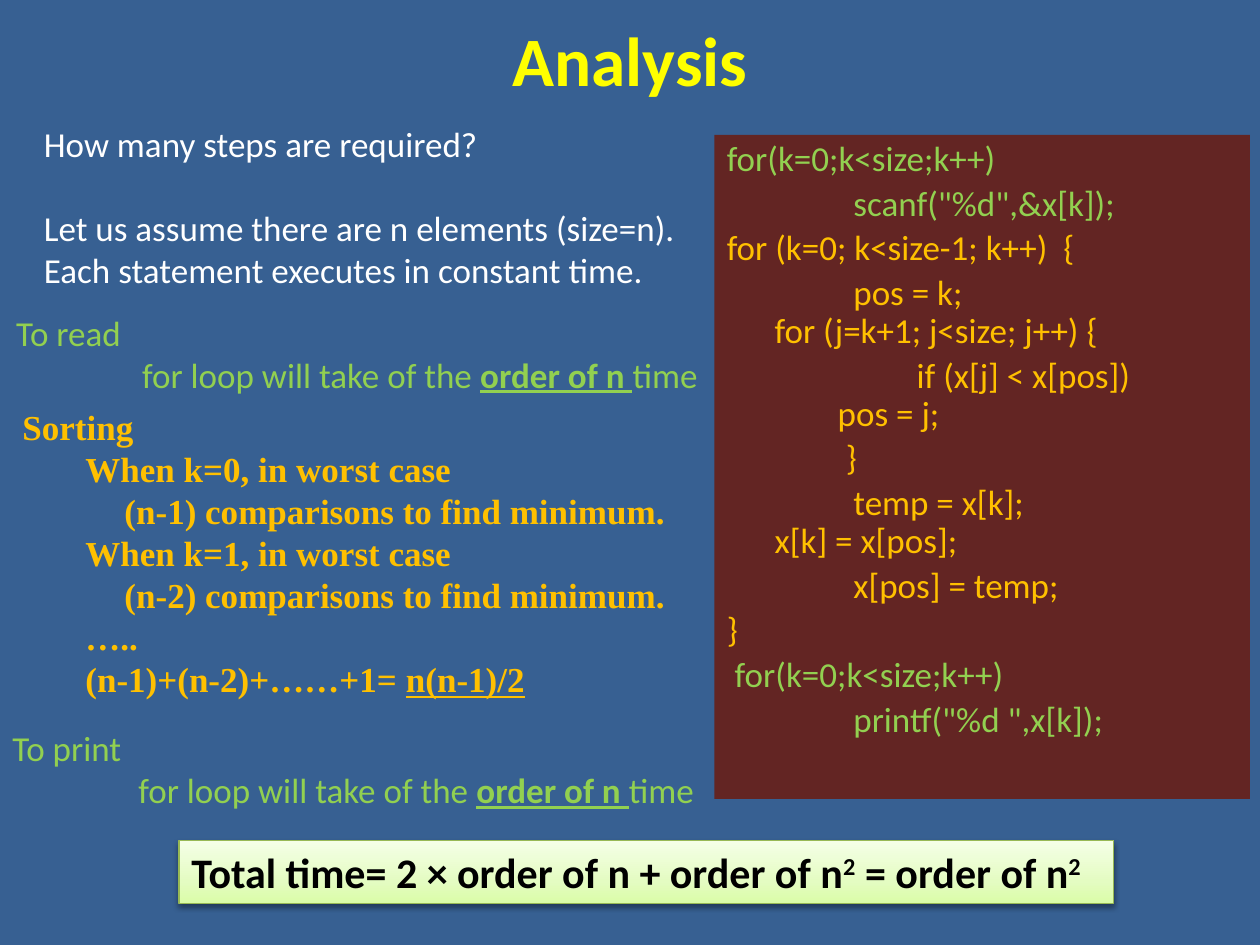
import pptx
import pptx.util
from pptx.dml.color import RGBColor
from pptx.enum.shapes import MSO_SHAPE
from pptx.enum.text import MSO_ANCHOR, PP_ALIGN
from pptx.oxml import parse_xml
from pptx.oxml.ns import nsdecls, qn
from pptx.util import Inches, Pt

BLUE = RGBColor(0x37, 0x60, 0x92)
MAROON = RGBColor(0x63, 0x25, 0x23)
YELLOW = RGBColor(0xFF, 0xFF, 0x00)
WHITE = RGBColor(0xFF, 0xFF, 0xFF)
BLACK = RGBColor(0, 0, 0)
GREEN = RGBColor(0x92, 0xD0, 0x50)
AMBER = RGBColor(0xFF, 0xC0, 0x00)
OLIVE = RGBColor(0x98, 0xB9, 0x55)
GLOW = [(0, "DAFDA7"), (35, "E4FCC2"), (100, "F5FFE7")]

# Lines of runs: (text, marks) with b = bold, u = underline, ^ = superscript
INTRO = [
    "How many steps are required?",
    "Let us assume there are n elements (size=n).",
    "Each statement executes in constant time.",
]
LOOP = [("for loop will take of the ", ""), ("order of n ", "bu"), ("time", "")]
LOOPS = [("To read", 0.03, 2.42), ("To print", 0, 5.72)]
# (left margin, first-line indent, runs)
SORT = [
    (0.38, -0.38, "Sorting"),
    (0.81, -0.31, "When k=0, in worst case"),
    (0.81, 0, "(n-1) comparisons to find minimum."),
    (0.81, -0.31, "When k=1, in worst case"),
    (0.81, 0, "(n-2) comparisons to find minimum."),
    (0.81, -0.31, "….."),
    (0.81, -0.31, [("(n-1)+(n-2)+……+1= ", ""), ("n(n-1)/2", "u")]),
]
CODE = [
    (GREEN, "for(k=0;k<size;k++)"),
    (GREEN, '                scanf("%d",&x[k]);'),
    (AMBER, "for (k=0; k<size-1; k++)  {"),
    (AMBER, "                pos = k;\vfor (j=k+1; j<size; j++) {"),
    (AMBER, "                        if (x[j] < x[pos])\v\tpos = j;"),
    (AMBER, "\t         }"),
    (AMBER, "                temp = x[k];\vx[k] = x[pos];"),
    (AMBER, "                x[pos] = temp;"),
    (AMBER, "}"),
    (GREEN, " for(k=0;k<size;k++)"),
    (GREEN, '                printf("%d ",x[k]);'),
]
TOTAL = [("Total time= 2 × order of n + order of n", ""), ("2", "^"),
         (" = order of n", ""), ("2", "^")]


def style(para, color, size=20, name="Calibri", bold=False):
    font = para.font
    font.name, font.size, font.bold = name, Pt(size), bold
    font.color.rgb = color


def write(frame, lines, color, **look):
    """Fill the frame with one paragraph per line and return the paragraphs."""
    paras = []
    for i, line in enumerate(lines):
        para = frame.add_paragraph() if i else frame.paragraphs[0]
        para.alignment = PP_ALIGN.LEFT
        if isinstance(line, str):
            para.text = line
        else:
            for text, marks in line:
                run = para.add_run()
                run.text = text
                if "b" in marks:
                    run.font.bold = True
                if "u" in marks:
                    run.font.underline = True
                if "^" in marks:
                    run.font._element.set("baseline", "30000")
        style(para, color, **look)
        paras.append(para)
    return paras


def indent(para, left, first=0):
    props = para._p.get_or_add_pPr()
    props.set("marL", str(Inches(left)))
    props.set("indent", str(Inches(first)))


def add_box(slide, left, top, width, height, wrap=True):
    box = slide.shapes.add_textbox(*map(Inches, (left, top, width, height)))
    box.text_frame.word_wrap = wrap
    return box.text_frame


def add_panel(slide, left, top, width, height, anchor):
    panel = slide.shapes.add_shape(
        MSO_SHAPE.RECTANGLE, *map(Inches, (left, top, width, height)))
    panel.shadow.inherit = False
    panel.text_frame.word_wrap = True
    panel.text_frame.vertical_anchor = anchor
    return panel


def add_glow(panel):
    """Give the panel a rising gradient and a soft shadow below."""
    panel.fill.gradient()
    panel.fill.gradient_angle = 90
    props = panel._element.spPr
    stops = props.find(qn("a:gradFill")).find(qn("a:gsLst"))
    for stop in list(stops):
        stops.remove(stop)
    for place, color in GLOW:
        stops.append(parse_xml(
            f'<a:gs {nsdecls("a")} pos="{place * 1000}">'
            f'<a:srgbClr val="{color}"/></a:gs>'))
    props.find(qn("a:effectLst")).append(parse_xml(
        f'<a:outerShdw {nsdecls("a")} blurRad="{Pt(3.1)}" dist="{Pt(1.6)}" '
        'dir="5400000" rotWithShape="0"><a:srgbClr val="000000">'
        '<a:alpha val="38000"/></a:srgbClr></a:outerShdw>'))


def main():
    deck = pptx.Presentation()
    deck.slide_width, deck.slide_height = Inches(10), Inches(7.5)
    slide = deck.slides.add_slide(deck.slide_layouts[5])
    slide.background.fill.solid()
    slide.background.fill.fore_color.rgb = BLUE

    title = slide.shapes.title
    title.left, title.top = Inches(0.5), Inches(0.08)
    title.width, title.height = Inches(9), Inches(0.78)
    title.text_frame.text = "Analysis"
    title.text_frame.vertical_anchor = MSO_ANCHOR.MIDDLE
    head = title.text_frame.paragraphs[0]
    head.alignment = PP_ALIGN.CENTER
    style(head, YELLOW, size=39.6, bold=True)

    frame = add_box(slide, 0.08, 3.17, 5.34, 2.46, wrap=False)
    paras = write(frame, [runs for _, _, runs in SORT], AMBER,
                  name="Times New Roman", bold=True)
    for para, (left, first, _) in zip(paras, SORT):
        indent(para, left, first)

    panel = add_panel(slide, 5.67, 1.07, 4.25, 5.27, MSO_ANCHOR.TOP)
    panel.fill.solid()
    panel.fill.fore_color.rgb = MAROON
    panel.line.fill.background()
    paras = write(panel.text_frame, [text for _, text in CODE], AMBER)
    for i, (para, (color, _)) in enumerate(zip(paras, CODE)):
        indent(para, 0.38, -0.38)
        para.line_spacing = 0.9
        para.space_before = Pt(4 if i else 0)
        para.font.color.rgb = color

    paras = write(add_box(slide, 0.25, 0.92, 5.3, 1.45), INTRO, WHITE)
    paras[1].space_before = Pt(24)

    for name, left, top in LOOPS:
        frame = add_box(slide, left, top, 5.64, 1.11, wrap=False)
        indent(write(frame, [name, LOOP], GREEN)[1], 1)

    panel = add_panel(slide, 1.42, 6.67, 7.42, 0.5, MSO_ANCHOR.TOP)
    add_glow(panel)
    panel.line.color.rgb = OLIVE
    panel.line.width = Pt(0.75)
    write(panel.text_frame, [TOTAL], BLACK, size=24, bold=True)

    deck.save("out.pptx")


if __name__ == "__main__":
    main()
